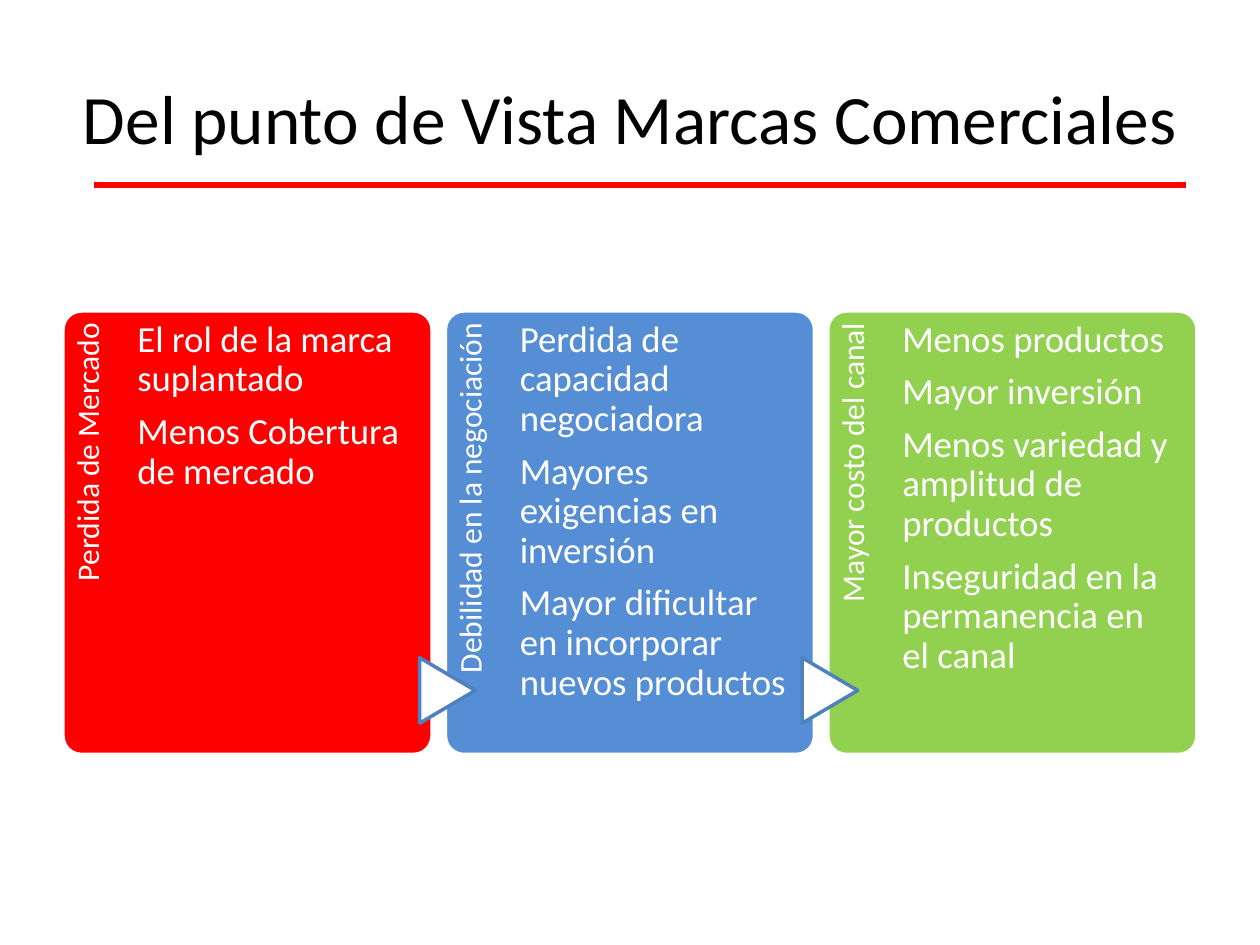
from pptx import Presentation
from pptx.dml.color import RGBColor
from pptx.enum.shapes import MSO_CONNECTOR, MSO_SHAPE
from pptx.enum.text import MSO_ANCHOR, PP_ALIGN
from pptx.oxml.ns import qn
from pptx.util import Cm, Pt
from lxml.etree import SubElement

BLACK = RGBColor(0x00, 0x00, 0x00)
WHITE = RGBColor(0xFF, 0xFF, 0xFF)
RED = RGBColor(0xFF, 0x00, 0x00)
BLUE = RGBColor(0x55, 0x8E, 0xD5)
GREEN = RGBColor(0x92, 0xD0, 0x50)
ARROW_LINE = RGBColor(0x4F, 0x81, 0xBD)

CARD_LEFT, CARD_TOP, CARD_WIDTH, CARD_HEIGHT = 1.27, 6.27, 7.44, 8.94
CARD_STEP = 7.71

CARDS = [
    ("Perdida de Mercado", RED,
     ["El rol de la marca suplantado", "Menos Cobertura de mercado"]),
    ("Debilidad en la negociación", BLUE,
     ["Perdida de capacidad negociadora", "Mayores exigencias en inversión",
      "Mayor dificultar en incorporar nuevos productos"]),
    ("Mayor costo del canal", GREEN,
     ["Menos productos", "Mayor inversión",
      "Menos variedad y amplitud de productos",
      "Inseguridad en la permanencia en el canal"]),
]


def add_text(s, box, lines, size, color, align=PP_ALIGN.LEFT):
    """Add a text box at box (left, top, width, height in cm), one paragraph per line."""
    sp = s.shapes.add_textbox(*map(Cm, box))
    tf = sp.text_frame
    tf.word_wrap = True
    tf.text = "\n".join(lines)
    for p in tf.paragraphs:
        p.alignment = align
        for r in p.runs:
            r.font.name = "Calibri"
            r.font.size = Pt(size)
            r.font.color.rgb = color
    return sp


def add_card_text(s, box, lines, size, align=PP_ALIGN.LEFT, right=0):
    sp = add_text(s, box, lines, size, WHITE, align)
    tf = sp.text_frame
    tf.margin_left = tf.margin_bottom = 0
    tf.margin_top, tf.margin_right = Cm(0.19), Cm(right)
    for p in tf.paragraphs:
        p.line_spacing = 0.9
        p.space_after = Pt(size * 0.35)
    return sp


def add_shape(s, kind, box, fill, line):
    sp = s.shapes.add_shape(kind, *map(Cm, box))
    sp.shadow.inherit = False
    sp.fill.solid()
    sp.fill.fore_color.rgb = fill
    sp.line.color.rgb = line
    sp.line.width = Pt(2)
    return sp


def add_title(s, text):
    sp = add_text(s, (1.27, 0.76, 22.86, 3.18), [text], 39.6, BLACK, PP_ALIGN.CENTER)
    sp.text_frame.vertical_anchor = MSO_ANCHOR.MIDDLE


def add_rule(s):
    rule = s.shapes.add_connector(
        MSO_CONNECTOR.STRAIGHT, Cm(1.9), Cm(3.73), Cm(23.9), Cm(3.73))
    rule.line.color.rgb = RED
    rule.line.width = Pt(3)
    SubElement(rule._element.spPr, qn("a:effectLst"))


def add_card(s, left, label, color, items, arrow):
    """Add a card with its vertical label and items; arrow leads in from the card before."""
    card = add_shape(s, MSO_SHAPE.ROUNDED_RECTANGLE,
                     (left, CARD_TOP, CARD_WIDTH, CARD_HEIGHT), color, WHITE)
    card.adjustments[0] = 0.05
    side = add_card_text(s, (left - 2.92, 9.19, 7.32, 1.5), [label], 18,
                         PP_ALIGN.RIGHT, right=0.23)
    side.rotation = 270
    if arrow:
        sp = add_shape(s, MSO_SHAPE.FLOWCHART_EXTRACT,
                       (left - 0.62, 13.36, 1.32, 1.12), WHITE, ARROW_LINE)
        sp.rotation = 90
    add_card_text(s, (left + 1.5, CARD_TOP, 5.54, CARD_HEIGHT), items, 21)


def main():
    prs = Presentation()
    prs.slide_width, prs.slide_height = Cm(25.4), Cm(19.05)
    s = prs.slides.add_slide(prs.slide_layouts[6])
    add_title(s, "Del punto de Vista Marcas Comerciales")
    for i, (label, color, items) in enumerate(CARDS):
        add_card(s, CARD_LEFT + i * CARD_STEP, label, color, items, arrow=i > 0)
    add_rule(s)
    prs.save("out.pptx")


if __name__ == "__main__":
    main()
